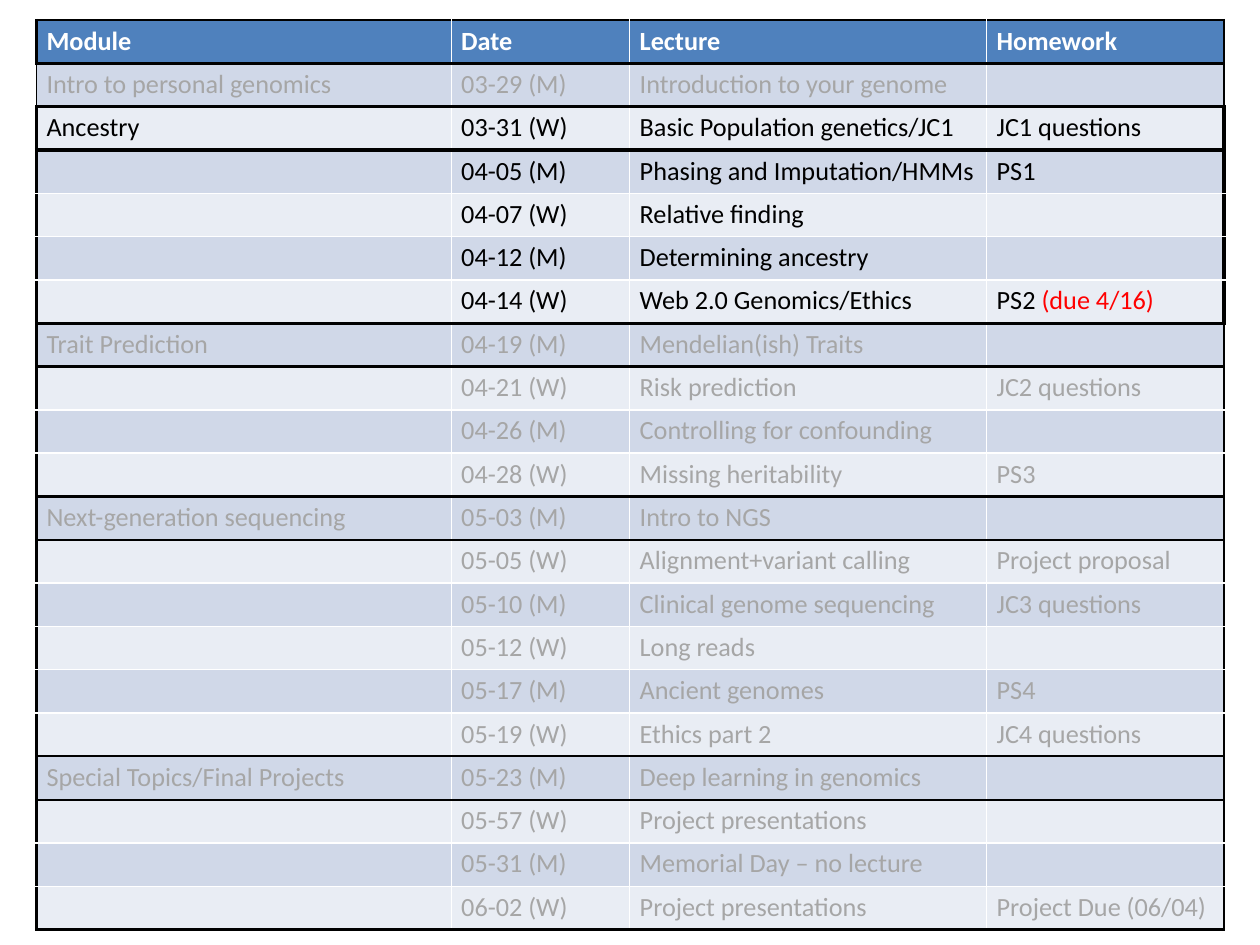
from dataclasses import dataclass

from lxml.etree import SubElement
from pptx import Presentation
from pptx.dml.color import RGBColor as RGB
from pptx.oxml.ns import qn
from pptx.util import Pt


@dataclass(frozen=True)
class Theme:
    font: str = "Calibri"
    size: float = 15
    header: str = "4F81BD"
    bands: tuple = ("E9EDF4", "D0D8E8")
    white: str = "FFFFFF"
    black: str = "000000"
    muted: str = "A6A6A6"
    due: str = "FF0000"
    rule: float = 1.5
    thin: float = 1
    thick: float = 2.25


THEME = Theme()
COLUMNS = (237, 102, 204, 135.5)
HEADER = ("Module", "Date", "Lecture", "Homework")
MODULES = [
    ("Intro to personal genomics", THEME.muted, THEME.thin, [
        ("03-29 (M)", "Introduction to your genome", ""),
    ]),
    ("Ancestry", THEME.black, THEME.thick, [
        ("03-31 (W)", "Basic Population genetics/JC1", "JC1 questions"),
        ("04-05 (M)", "Phasing and Imputation/HMMs", "PS1"),
        ("04-07 (W)", "Relative finding", ""),
        ("04-12 (M)", "Determining ancestry", ""),
        ("04-14 (W)", "Web 2.0 Genomics/Ethics", "PS2 |(due 4/16)"),
    ]),
    ("Trait Prediction", THEME.muted, THEME.rule, [
        ("04-19 (M)", "Mendelian(ish) Traits", ""),
        ("04-21 (W)", "Risk prediction", "JC2 questions"),
        ("04-26 (M)", "Controlling for confounding", ""),
        ("04-28 (W)", "Missing heritability", "PS3"),
    ]),
    ("Next-generation sequencing", THEME.muted, THEME.rule, [
        ("05-03 (M)", "Intro to NGS", ""),
        ("05-05 (W)", "Alignment+variant calling", "Project proposal"),
        ("05-10 (M)", "Clinical genome sequencing", "JC3 questions"),
        ("05-12 (W)", "Long reads", ""),
        ("05-17 (M)", "Ancient genomes", "PS4"),
        ("05-19 (W)", "Ethics part 2", "JC4 questions"),
    ]),
    ("Special Topics/Final Projects", THEME.muted, THEME.rule, [
        ("05-23 (M)", "Deep learning in genomics", ""),
        ("05-57 (W)", "Project presentations", ""),
        ("05-31 (M)", "Memorial Day – no lecture", ""),
        ("06-02 (W)", "Project presentations", "Project Due (06/04)"),
    ]),
]


def write_text(cell, text, color, bold):
    p = cell.text_frame.paragraphs[0]
    if not text:
        SubElement(p._p, qn("a:endParaRPr"), sz=str(int(THEME.size * 100)))
        return
    for part, shade in zip(text.split("|"), (color, THEME.due)):
        r = p.add_run()
        r.text = part
        r.font.color.rgb = RGB.from_string(shade)
        for name, value in dict(name=THEME.font, size=Pt(THEME.size), bold=bold).items():
            setattr(r.font, name, value)


def draw_borders(cell, widths):
    tc_pr = cell._tc.get_or_add_tcPr()
    for side in "LRTB":
        if side in widths:
            ln = SubElement(tc_pr, qn(f"a:ln{side}"), w=str(Pt(widths[side])))
            fill = SubElement(ln, qn("a:solidFill"))
            SubElement(fill, qn("a:srgbClr"), val=THEME.black)


def fill_row(table, row, texts, color, fill, widths, bold=False):
    last = len(texts) - 1
    for col, text in enumerate(texts):
        cell = table.cell(row, col)
        margins = dict(margin_left=5.7, margin_right=5.7, margin_top=2.85, margin_bottom=2.85)
        for name, value in margins.items():
            setattr(cell, name, Pt(value))
        write_text(cell, text, color, bold)
        outer = {"L": col == 0, "R": col == last, "T": True, "B": True}
        draw_borders(cell, {side: w for side, w in widths.items() if outer[side]})
        cell.fill.solid()
        cell.fill.fore_color.rgb = RGB.from_string(fill)


def add_schedule(s, left, top, width, height):
    blocks = [(THEME.white, THEME.rule, [HEADER])]
    for module, color, weight, lectures in MODULES:
        rows = [(module if i == 0 else "", *lecture) for i, lecture in enumerate(lectures)]
        blocks.append((color, weight, rows))
    count = sum(len(rows) for _, _, rows in blocks)
    table = s.shapes.add_table(count, len(COLUMNS), Pt(left), Pt(top), Pt(width), Pt(height)).table
    for column, share in zip(table.columns, COLUMNS):
        column.width = Pt(width * share / sum(COLUMNS))
    for table_row in table.rows:
        table_row.height = Pt(height / count)

    weights = [weight for _, weight, _ in blocks]
    row = 0
    for n, (color, weight, rows) in enumerate(blocks):
        for i, texts in enumerate(rows):
            widths = {"L": weight, "R": weight}
            if i == 0:
                widths["T"] = max(weights[max(n - 1, 0):n + 1])
            if i == len(rows) - 1:
                widths["B"] = max(weights[n:n + 2])
            fill = THEME.header if n == 0 else THEME.bands[row % 2]
            fill_row(table, row, texts, color, fill, widths, bold=n == 0)
            row += 1


def main():
    prs = Presentation()
    prs.slide_width, prs.slide_height = Pt(720), Pt(540)
    s = prs.slides.add_slide(prs.slide_layouts[6])
    add_schedule(s, 20.9, 11.5, 678.5, 519.75)
    prs.save("out.pptx")


if __name__ == "__main__":
    main()
